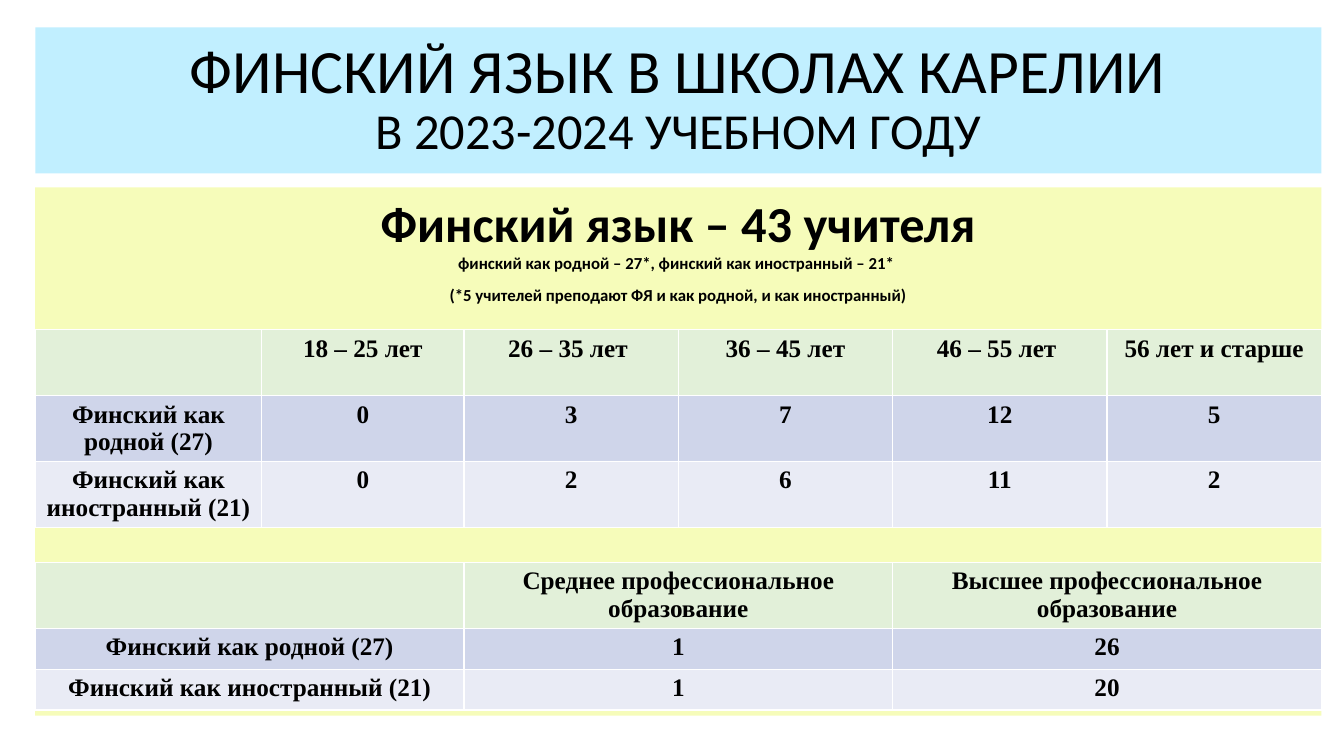
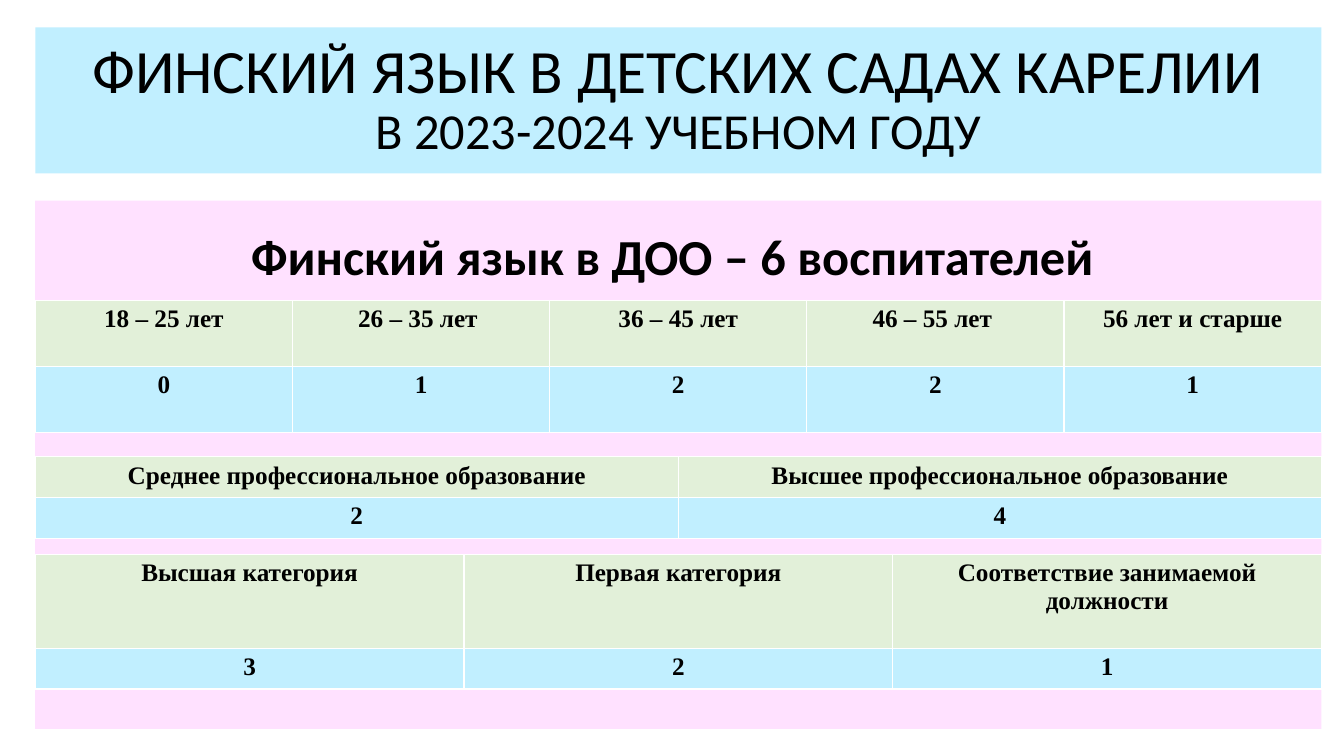
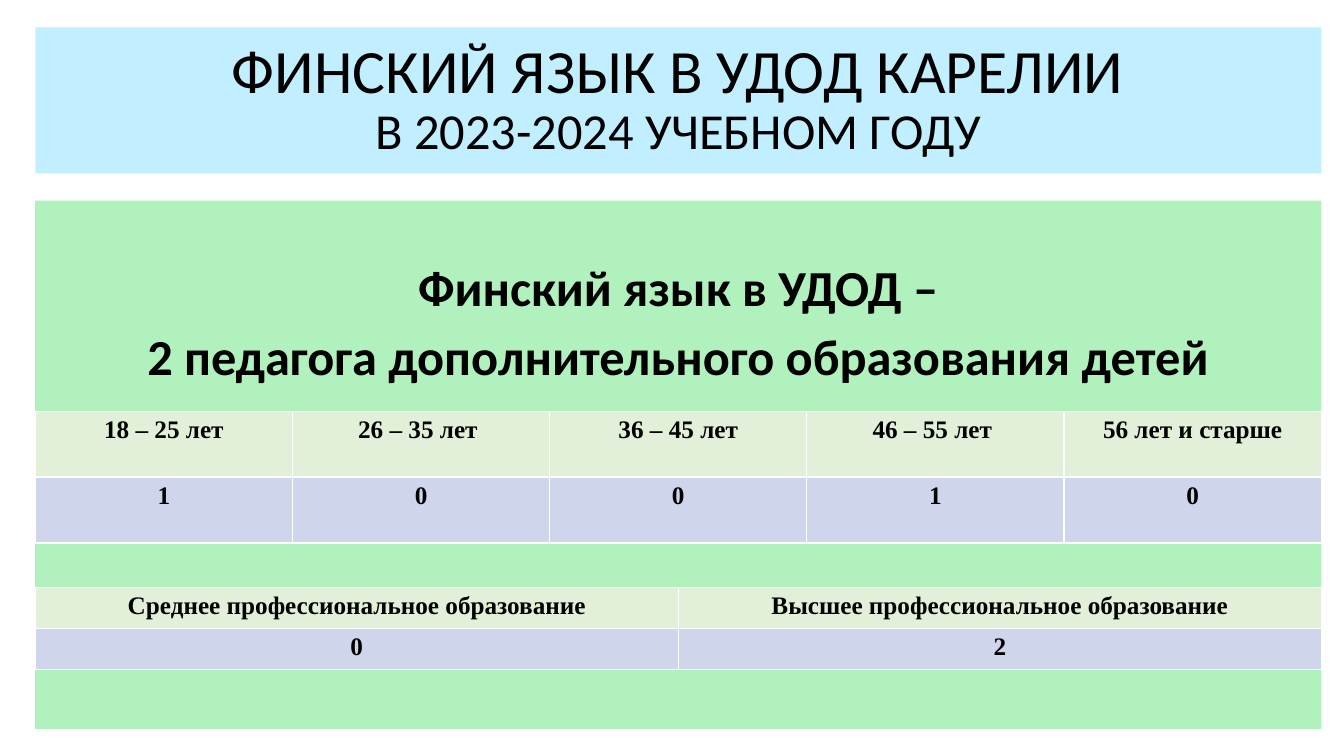
from pptx import Presentation
from pptx.dml.color import RGBColor
from pptx.enum.shapes import MSO_SHAPE as Shape
from pptx.enum.text import MSO_ANCHOR as Anchor, MSO_AUTO_SIZE as AutoSize, PP_ALIGN as Align
from pptx.util import Pt

LEFT, WIDTH = 25.2, 918.7
TITLE_TOP, TITLE_HEIGHT = 19.5, 104.4
PANEL_HEIGHT = 377.3
ONE_LINE, TWO_LINES, THREE_LINES = 29.2, 47.1, 67
SKY, MINT, BLUE, PALE = "C1EFFF", "E2F0D9", "CFD5EA", "E9EBF5"

YEAR = "В 2023-2024 УЧЕБНОМ ГОДУ"
AGES = ["18 – 25 лет", "26 – 35 лет ", "36 – 45 лет", "46 – 55 лет ", "56 лет и старше"]
EDUCATION = ["Среднее профессиональное образование", "Высшее профессиональное образование"]
CATEGORIES = ["Высшая категория", "Первая категория", "Соответствие занимаемой должности"]
NATIVE, FOREIGN = "Финский как родной (27)", "Финский как иностранный (21)"

BIG_TITLE = {"name": "Calibri", "size": Pt(44), "bold": False}
SMALL_TITLE = {**BIG_TITLE, "size": Pt(36)}
HEADING = {"name": "Calibri", "size": Pt(36), "bold": True}
NOTE = {**HEADING, "size": Pt(12)}
CELL = {"name": "Times New Roman", "size": Pt(18), "bold": True}

CENTERED = {"alignment": Align.CENTER}
PLAIN = {**CENTERED, "line_spacing": 1.0, "space_before": Pt(0)}
TIGHT = {**CENTERED, "line_spacing": 0.9, "space_before": Pt(0)}
SPACED = {**TIGHT, "space_before": Pt(10)}

SLIDES = [
    {
        "title": "ФИНСКИЙ ЯЗЫК В ШКОЛАХ КАРЕЛИИ",
        "panel": {"top": 133.9, "inset": 3.6, "fill": "F6FCBA"},
        "lines": [
            ("Финский язык – 43 учителя", HEADING, PLAIN),
            ("финский как родной – 27*, финский как иностранный – 21* ", NOTE, PLAIN),
            ("(*5 учителей преподают ФЯ и как родной, и как иностранный)", NOTE, SPACED),
        ],
        "tables": [
            {
                "top": 235.4,
                "weights": [2.25, 2.01, 2.13, 2.13, 2.13, 2.13],
                "heights": [TWO_LINES] * 3,
                "fills": [MINT, BLUE, PALE],
                "rows": [
                    ["", *AGES],
                    [NATIVE, "0", "3", "7", "12", "5"],
                    [FOREIGN, "0", "2", "6", "11", "2"],
                ],
            },
            {
                "top": 401.7,
                "heights": [TWO_LINES, ONE_LINE, ONE_LINE],
                "fills": [MINT, BLUE, PALE],
                "rows": [["", *EDUCATION], [NATIVE, "1", "26"], [FOREIGN, "1", "20"]],
            },
        ],
    },
    {
        "title": "ФИНСКИЙ ЯЗЫК В ДЕТСКИХ САДАХ КАРЕЛИИ",
        "panel": {"top": 143.4, "inset": 22.6, "fill": "FFE1FF"},
        "lines": [("Финский язык в ДОО – 6 воспитателей ", HEADING, TIGHT)],
        "tables": [
            {
                "top": 214.5,
                "heights": [TWO_LINES] * 2,
                "fills": [MINT, SKY],
                "rows": [AGES, ["0", "1", "2", "2", "1"]],
            },
            {
                "top": 326.1,
                "heights": [ONE_LINE] * 2,
                "fills": [MINT, SKY],
                "rows": [EDUCATION, ["2", "4"]],
            },
            {
                "top": 396,
                "heights": [THREE_LINES, ONE_LINE],
                "fills": [MINT, SKY],
                "rows": [CATEGORIES, ["3", "2", "1"]],
            },
        ],
    },
    {
        "title": "ФИНСКИЙ ЯЗЫК В УДОД КАРЕЛИИ",
        "panel": {"top": 143.4, "inset": 44.6, "fill": "B1F1BD"},
        "lines": [
            ("Финский язык в УДОД –", HEADING, TIGHT),
            ("2 педагога дополнительного образования детей", HEADING, SPACED),
        ],
        "tables": [
            {
                "top": 293.7,
                "heights": [TWO_LINES] * 2,
                "fills": [MINT, BLUE],
                "rows": [AGES, ["1", "0", "0", "1", "0"]],
            },
            {
                "top": 419.6,
                "heights": [ONE_LINE] * 2,
                "fills": [MINT, BLUE],
                "rows": [EDUCATION, ["0", "2"]],
            },
        ],
    },
]


def paint(fill, color):
    fill.solid()
    fill.fore_color.rgb = RGBColor.from_string(color)


def assign(target, values):
    for name, value in values.items():
        setattr(target, name, value)


def write(paragraph, text, font, layout):
    assign(paragraph, layout)
    run = paragraph.add_run()
    run.text = text
    assign(run.font, font)
    paint(run.font.fill, "000000")


def add_title(slide, text):
    title = slide.shapes.title
    assign(title, {"left": Pt(LEFT), "top": Pt(TITLE_TOP),
                   "width": Pt(WIDTH), "height": Pt(TITLE_HEIGHT)})
    paint(title.fill, SKY)
    frame = title.text_frame
    assign(frame, {"auto_size": AutoSize.NONE, "word_wrap": True,
                   "vertical_anchor": Anchor.MIDDLE})
    heading = frame.paragraphs[0]
    write(heading, text, BIG_TITLE, TIGHT)
    heading.add_line_break()
    write(heading, YEAR, SMALL_TITLE, TIGHT)


def add_panel(slide, top, inset, fill, lines):
    panel = slide.shapes.add_shape(
        Shape.RECTANGLE, Pt(LEFT), Pt(top), Pt(WIDTH), Pt(PANEL_HEIGHT))
    panel.shadow.inherit = False
    panel.line.fill.background()
    paint(panel.fill, fill)
    frame = panel.text_frame
    assign(frame, {"word_wrap": True, "vertical_anchor": Anchor.TOP, "margin_top": Pt(inset)})
    for index, line in enumerate(lines):
        write(frame.add_paragraph() if index else frame.paragraphs[0], *line)


def add_grid(slide, top, heights, fills, rows, weights=None):
    weights = weights or [1] * len(rows[0])
    grid = slide.shapes.add_table(
        len(rows), len(weights), Pt(LEFT), Pt(top), Pt(WIDTH), Pt(sum(heights))).table
    for column, weight in zip(grid.columns, weights):
        column.width = Pt(WIDTH * weight / sum(weights))
    for row, height, fill, texts in zip(grid.rows, heights, fills, rows):
        row.height = Pt(height)
        for cell, text in zip(row.cells, texts):
            paint(cell.fill, fill)
            if text:
                write(cell.text_frame.paragraphs[0], text, CELL, CENTERED)


def main():
    deck = Presentation()
    assign(deck, {"slide_width": Pt(960), "slide_height": Pt(540)})
    for content in SLIDES:
        slide = deck.slides.add_slide(deck.slide_layouts[5])
        add_title(slide, content["title"])
        add_panel(slide, **content["panel"], lines=content["lines"])
        for table in content["tables"]:
            add_grid(slide, **table)
    deck.save("out.pptx")


if __name__ == "__main__":
    main()
